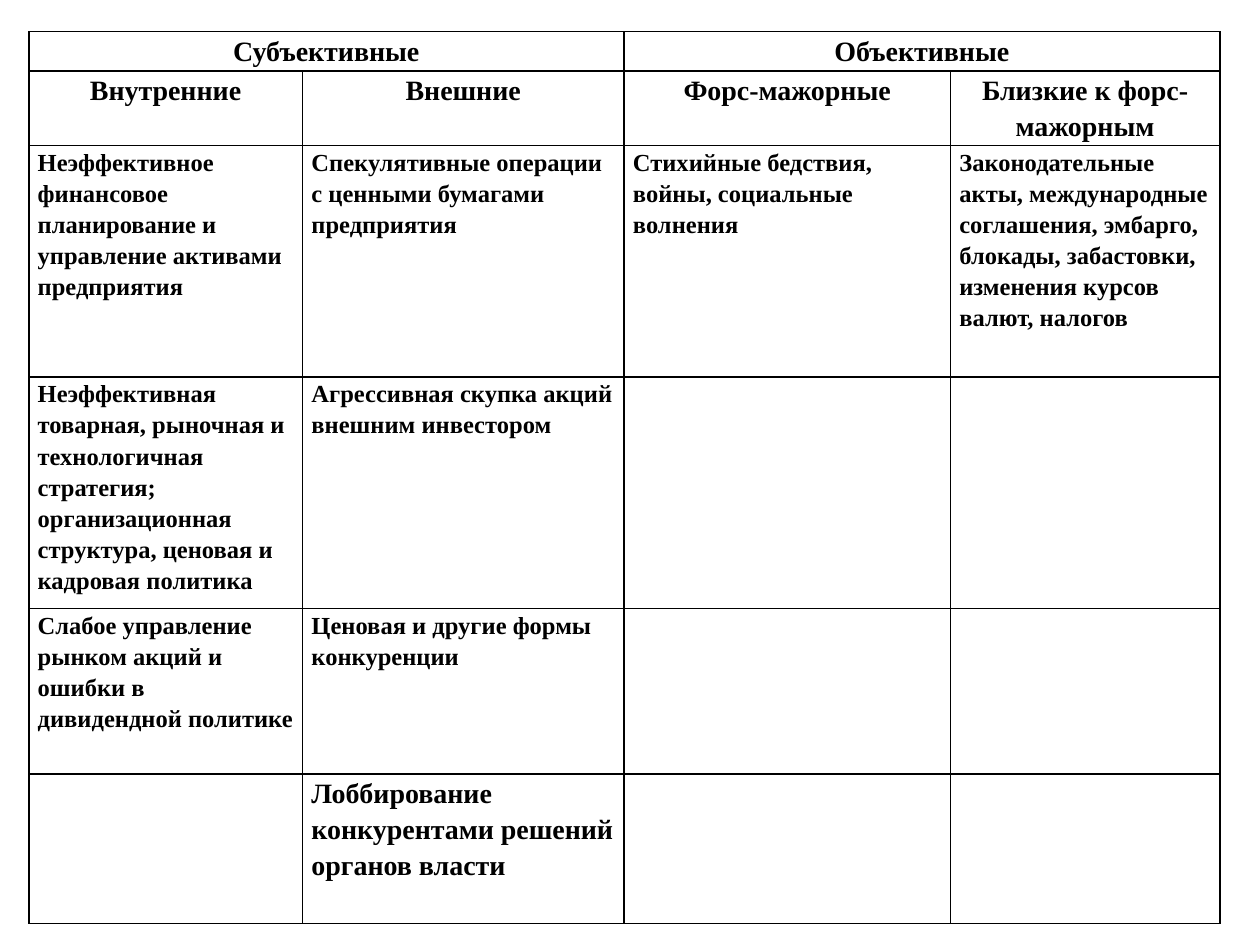
from lxml import etree
from pptx import Presentation
from pptx.dml.color import RGBColor
from pptx.enum import text
from pptx.oxml.ns import qn
from pptx.util import Cm, Pt

GROUPS = ["Субъективные", "Объективные"]
FACTORS = [
    ["Внутренние", "Внешние", "Форс-мажорные", "Близкие к форс-мажорным"],
    [
        "Неэффективное финансовое планирование и управление активами предприятия",
        "Спекулятивные операции с ценными бумагами предприятия",
        "Стихийные бедствия, войны, социальные волнения",
        "Законодательные акты, международные соглашения, эмбарго, блокады, "
        "забастовки, изменения курсов валют, налогов",
    ],
    [
        "Неэффективная товарная, рыночная и технологичная стратегия; "
        "организационная структура, ценовая и кадровая политика",
        "Агрессивная скупка акций внешним инвестором", "", "",
    ],
    [
        "Слабое управление рынком акций и ошибки в дивидендной политике",
        "Ценовая и другие формы конкуренции", "", "",
    ],
    ["", "Лоббирование конкурентами решений органов власти", "", ""],
]
COLUMN_WIDTHS = [5.52, 6.48, 6.58, 5.43]
ROW_HEIGHTS = [0.79, 1.5, 4.67, 4.67, 3.33, 3.02]
LEFT, TOP = 0.58, 0.64
HEADER_ROWS = 2
THEME = {
    "font": "Times New Roman",
    "ink": "000000",
    "large": 16,
    "body": 14,
    "spacing": 1.15,
    "border": 1,
}


def draw_borders(cell):
    properties = cell._tc.get_or_add_tcPr()
    for index, side in enumerate(("lnL", "lnR", "lnT", "lnB")):
        line = etree.Element(qn(f"a:{side}"), w=str(Pt(THEME["border"])))
        fill = etree.SubElement(line, qn("a:solidFill"))
        etree.SubElement(fill, qn("a:srgbClr"), val=THEME["ink"])
        properties.insert(index, line)


def fill_cell(cell, words, size, centred):
    cell.fill.background()
    cell.margin_left = cell.margin_right = Cm(0.18)
    cell.margin_top = cell.margin_bottom = 0
    draw_borders(cell)
    if not words:
        return
    cell.text_frame.text = words
    para = cell.text_frame.paragraphs[0]
    para.line_spacing = THEME["spacing"]
    para.alignment = text.PP_ALIGN.CENTER if centred else text.PP_ALIGN.LEFT
    font = para.runs[0].font
    font.name = THEME["font"]
    font.size = Pt(size)
    font.bold = True
    font.color.rgb = RGBColor.from_string(THEME["ink"])


def build_table(page):
    rows = [[GROUPS[0], "", GROUPS[1], ""]] + FACTORS
    table = page.shapes.add_table(
        len(rows), len(COLUMN_WIDTHS), Cm(LEFT), Cm(TOP),
        Cm(sum(COLUMN_WIDTHS)), Cm(sum(ROW_HEIGHTS)),
    ).table
    table.first_row = table.horz_banding = False
    for column, width in zip(table.columns, COLUMN_WIDTHS):
        column.width = Cm(width)
    for row, height in zip(table.rows, ROW_HEIGHTS):
        row.height = Cm(height)
    for start in (0, 2):
        table.cell(0, start).merge(table.cell(0, start + 1))
    for r, row in enumerate(rows):
        header = r < HEADER_ROWS
        size = THEME["large" if header or r == len(rows) - 1 else "body"]
        for c, words in enumerate(row):
            fill_cell(table.cell(r, c), words, size, header)


def main():
    deck = Presentation()
    deck.slide_width, deck.slide_height = Cm(25.4), Cm(19.05)
    build_table(deck.slides.add_slide(deck.slide_layouts[6]))
    deck.save("out.pptx")


if __name__ == "__main__":
    main()
